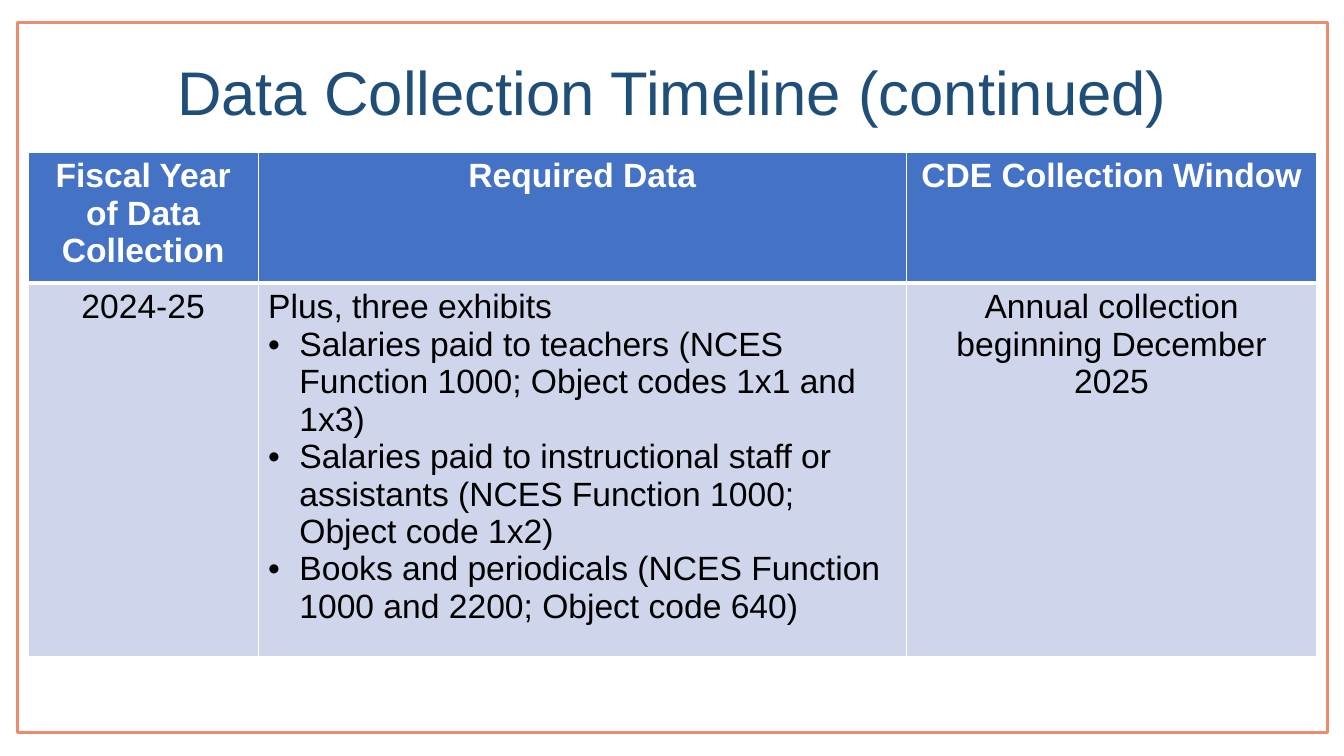
from lxml.etree import SubElement
from pptx import Presentation
from pptx.dml.color import RGBColor
from pptx.enum.shapes import MSO_SHAPE
from pptx.enum.text import MSO_ANCHOR, PP_ALIGN
from pptx.oxml.ns import qn
from pptx.util import Inches, Pt

COLORS = {
    "frame": "ED8B6F",
    "title": "1F4E79",
    "header": "4472C4",
    "body": "CFD5EA",
    "white": "FFFFFF",
    "black": "000000",
}
HEADERS = ["Fiscal Year of Data Collection", "Required Data", "CDE Collection Window"]
EXHIBITS = [
    "Salaries paid to teachers (NCES Function 1000; Object codes 1x1 and 1x3)",
    "Salaries paid to instructional staff or assistants (NCES Function 1000; Object code 1x2)",
    "Books and periodicals (NCES Function 1000 and 2200; Object code 640)",
]
COL_WIDTHS = [2.28, 6.43, 4.07]
ROW_HEIGHTS = [1.21, 3.43]


def rgb(name):
    """Return the named palette colour."""
    return RGBColor.from_string(COLORS[name])


def write(p, text, size=24, color="black", bold=False, align=PP_ALIGN.CENTER,
          spacing=None, bullet=False):
    """Write formatted text into a paragraph."""
    p.alignment = align
    if spacing:
        p.line_spacing = spacing
    if bullet:
        pPr = p._p.get_or_add_pPr()
        pPr.set("marL", str(Inches(0.31)))
        pPr.set("indent", str(-Inches(0.31)))
        SubElement(pPr, qn("a:buFont"), typeface="Arial")
        SubElement(pPr, qn("a:buChar"), char="•")
    r = p.add_run()
    r.text = text
    r.font.name = "Arial"
    r.font.size = Pt(size)
    r.font.bold = bold
    r.font.color.rgb = rgb(color)


def style_cell(cell, fill, bottom):
    """Give a cell white borders and a solid fill."""
    tcPr = cell._tc.get_or_add_tcPr()
    for side, width in (("L", 1), ("R", 1), ("T", 1), ("B", bottom)):
        ln = SubElement(tcPr, qn(f"a:ln{side}"), w=str(Pt(width)))
        SubElement(SubElement(ln, qn("a:solidFill")), qn("a:srgbClr"), val=COLORS["white"])
    cell.fill.solid()
    cell.fill.fore_color.rgb = rgb(fill)


def add_frame(s, x, y, w, h):
    """Draw the outline around the slide."""
    sp = s.shapes.add_shape(MSO_SHAPE.RECTANGLE, Inches(x), Inches(y), Inches(w), Inches(h))
    sp.shadow.inherit = False
    sp.fill.background()
    sp.line.color.rgb = rgb("frame")
    sp.line.width = Pt(2)


def add_title(s, x, y, w, h):
    """Place the centred slide title."""
    tf = s.shapes.add_textbox(Inches(x), Inches(y), Inches(w), Inches(h)).text_frame
    tf.word_wrap = True
    tf.vertical_anchor = MSO_ANCHOR.MIDDLE
    write(tf.paragraphs[0], "Data Collection Timeline (continued)",
          size=44, color="title", spacing=0.9)


def add_timeline(s, x, y):
    """Build the collection timeline table."""
    table = s.shapes.add_table(
        len(ROW_HEIGHTS), len(COL_WIDTHS), Inches(x), Inches(y),
        Inches(sum(COL_WIDTHS)), Inches(sum(ROW_HEIGHTS))).table
    for col, width in zip(table.columns, COL_WIDTHS):
        col.width = Inches(width)
    for row, height in zip(table.rows, ROW_HEIGHTS):
        row.height = Inches(height)
    for i, header in enumerate(HEADERS):
        style_cell(table.cell(0, i), "header", 3)
        style_cell(table.cell(1, i), "body", 1)
        write(table.cell(0, i).text_frame.paragraphs[0], header, color="white", bold=True)
    year, data, window = (table.cell(1, i).text_frame for i in range(3))
    write(year.paragraphs[0], "2024-25")
    write(data.paragraphs[0], "Plus, three exhibits", align=PP_ALIGN.LEFT)
    for exhibit in EXHIBITS:
        write(data.add_paragraph(), exhibit, align=PP_ALIGN.LEFT, bullet=True)
    write(window.paragraphs[0], "Annual collection beginning December 2025")


def main():
    """Build and save the slide."""
    prs = Presentation()
    prs.slide_width, prs.slide_height = Inches(13.33), Inches(7.5)
    s = prs.slides.add_slide(prs.slide_layouts[6])
    add_frame(s, 0.17, 0.22, 13, 7.05)
    add_title(s, 0.17, 0.22, 13, 1.45)
    add_timeline(s, 0.28, 1.51)
    prs.save("out.pptx")


if __name__ == "__main__":
    main()
